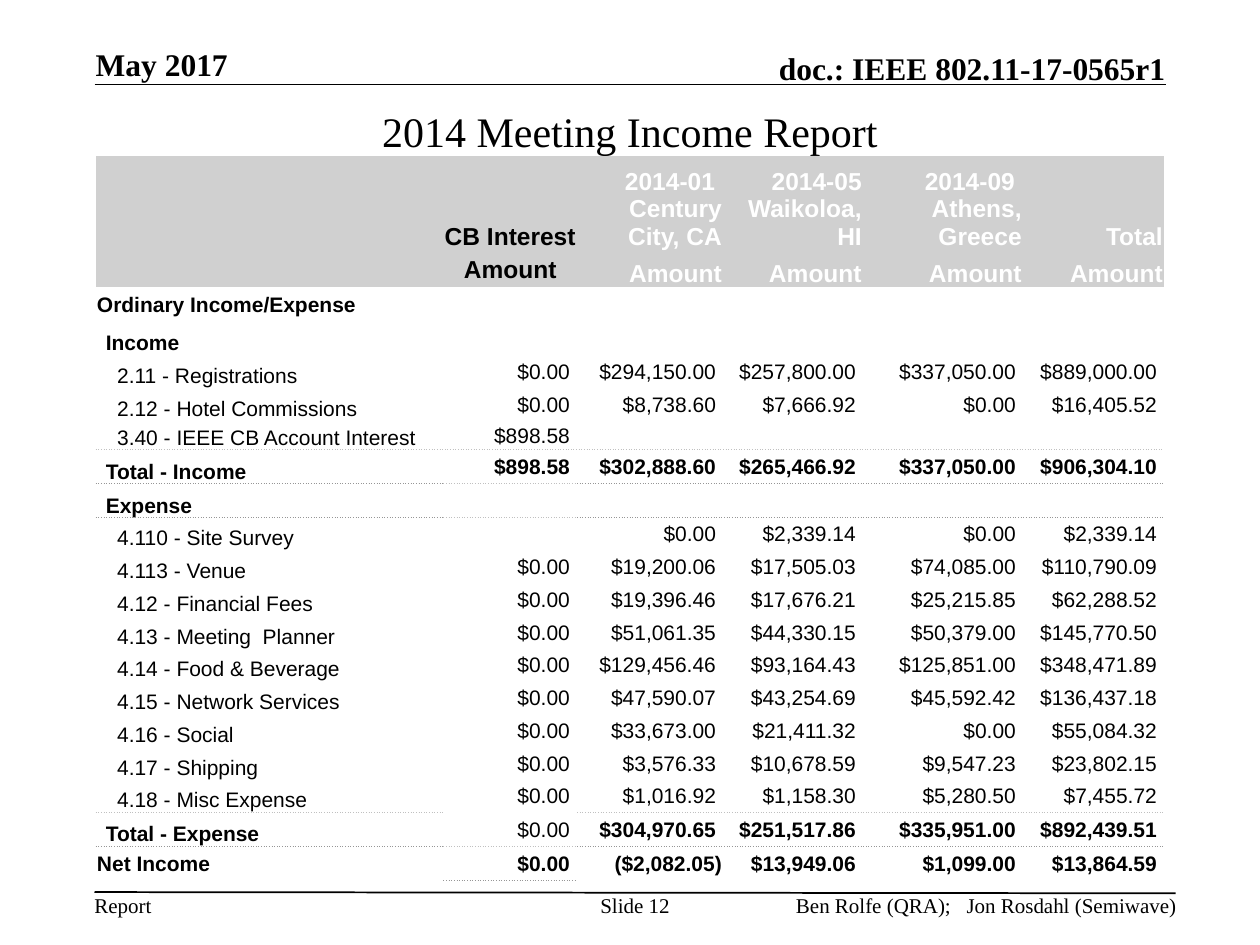
from lxml import etree
from pptx import Presentation
from pptx import util as u
from pptx.dml.color import RGBColor
from pptx.enum import shapes, text
from pptx.oxml import ns

LEFT, CENTER, RIGHT = text.PP_ALIGN.LEFT, text.PP_ALIGN.CENTER, text.PP_ALIGN.RIGHT
TOP, MIDDLE, BOTTOM = (text.MSO_ANCHOR.TOP, text.MSO_ANCHOR.MIDDLE,
                       text.MSO_ANCHOR.BOTTOM)
BLACK, WHITE, GREY = "000000", "FFFFFF", "D0D0D0"
LIGHT, DARK = "C0C0C0", "969696"
SERIF, SANS = "Times New Roman", "Arial"
NO_STYLE = "{2D5ABB26-0587-4C30-8999-92F81FD0307C}"

COLUMNS = [2.76, 1.06, 1.16, 1.11, 1.27, 1.12]
ROWS = [0.41, 0.75, 0.29, 0.27, 0.27, 0.26, 0.26, 0.23, 0.27, 0.27] + [0.26] * 9 + [0.27] * 2
INDENTS = [0.01, 0.08, 0.17]
HEADINGS = ["CB Interest", "2014-01 \nCentury City, CA", "2014-05 Waikoloa, HI",
            "2014-09 \nAthens, Greece", "Total"]
ENTRIES = [
    (0, "Ordinary Income/Expense", []),
    (1, "Income", []),
    (2, "2.11 - Registrations",
     ["$0.00", "$294,150.00", "$257,800.00", "$337,050.00", "$889,000.00"]),
    (2, "2.12 - Hotel Commissions",
     ["$0.00", "$8,738.60", "$7,666.92", "$0.00", "$16,405.52"]),
    (2, "3.40 - IEEE CB Account Interest", ["$898.58"]),
    (1, "Total - Income",
     ["$898.58", "$302,888.60", "$265,466.92", "$337,050.00", "$906,304.10"]),
    (1, "Expense", []),
    (2, "4.110 - Site Survey", ["", "$0.00", "$2,339.14", "$0.00", "$2,339.14"]),
    (2, "4.113 - Venue",
     ["$0.00", "$19,200.06", "$17,505.03", "$74,085.00", "$110,790.09"]),
    (2, "4.12 - Financial Fees",
     ["$0.00", "$19,396.46", "$17,676.21", "$25,215.85", "$62,288.52"]),
    (2, "4.13 - Meeting  Planner",
     ["$0.00", "$51,061.35", "$44,330.15", "$50,379.00", "$145,770.50"]),
    (2, "4.14 - Food & Beverage",
     ["$0.00", "$129,456.46", "$93,164.43", "$125,851.00", "$348,471.89"]),
    (2, "4.15 - Network Services",
     ["$0.00", "$47,590.07", "$43,254.69", "$45,592.42", "$136,437.18"]),
    (2, "4.16 - Social",
     ["$0.00", "$33,673.00", "$21,411.32", "$0.00", "$55,084.32"]),
    (2, "4.17 - Shipping",
     ["$0.00", "$3,576.33", "$10,678.59", "$9,547.23", "$23,802.15"]),
    (2, "4.18 - Misc Expense",
     ["$0.00", "$1,016.92", "$1,158.30", "$5,280.50", "$7,455.72"]),
    (1, "Total - Expense",
     ["$0.00", "$304,970.65", "$251,517.86", "$335,951.00", "$892,439.51"]),
    (0, "Net Income",
     ["$0.00", "($2,082.05)", "$13,949.06", "$1,099.00", "$13,864.59"]),
]
RULES_BELOW = {
    7: [LIGHT] * 6,
    8: [DARK, LIGHT] + [DARK] * 4,
    18: [LIGHT, None] + [LIGHT] * 4,
    19: [DARK, LIGHT] + [DARK] * 4,
    20: [None, DARK] + [None] * 4,
}


def color(value):
    return RGBColor.from_string(value)


class ReportSlide:
    """Draws report elements on one slide in a shared style."""

    def __init__(self, page):
        self.page = page

    def add_words(self, para, words, size, font, ink=BLACK, bold=False, align=LEFT):
        para.alignment = align
        for index, line in enumerate(words.split("\n")):
            if index:
                para.add_line_break()
            span = para.add_run()
            span.text = line
            span.font.size = u.Pt(size)
            span.font.name = font
            span.font.bold = bold
            span.font.color.rgb = color(ink)

    def label(self, place, words, size, bold=False, align=LEFT, anchor=TOP, wrap=True):
        frame = self.page.shapes.add_textbox(*map(u.Inches, place)).text_frame
        frame.margin_left = frame.margin_right = frame.margin_top = frame.margin_bottom = 0
        frame.word_wrap = wrap
        frame.vertical_anchor = anchor
        self.add_words(frame.paragraphs[0], words, size, SERIF, bold=bold, align=align)

    def rule(self, *ends):
        line = self.page.shapes.add_connector(shapes.MSO_CONNECTOR.STRAIGHT,
                                              *map(u.Inches, ends))
        line.line.color.rgb = color(BLACK)
        line.line.width = u.Pt(1)
        etree.SubElement(line._element.spPr, ns.qn("a:effectLst"))

    def grid(self, left, top):
        frame = self.page.shapes.add_table(len(ROWS), len(COLUMNS), u.Inches(left),
                                           u.Inches(top), u.Inches(sum(COLUMNS)),
                                           u.Inches(sum(ROWS)))
        table = frame.table
        table.first_row = table.horz_banding = False
        table._tbl.tblPr.find(ns.qn("a:tableStyleId")).text = NO_STYLE
        for column, width in zip(table.columns, COLUMNS):
            column.width = u.Inches(width)
        for row, height in zip(table.rows, ROWS):
            row.height = u.Inches(height)
        return table

    def border(self, cell, side, ink):
        line = etree.SubElement(cell._tc.get_or_add_tcPr(), ns.qn("a:" + side),
                                w=str(u.Pt(0.5)))
        fill = etree.SubElement(line, ns.qn("a:solidFill"))
        etree.SubElement(fill, ns.qn("a:srgbClr"), val=ink)
        etree.SubElement(line, ns.qn("a:prstDash"), val="dot")

    def cell(self, table, row, col, words="", size=12, font=SANS, indent=0.01,
             anchor=MIDDLE, fill=None, **style):
        cell = table.cell(row, col)
        cell.margin_left = u.Inches(indent)
        cell.margin_right = cell.margin_top = u.Inches(0.01)
        cell.margin_bottom = 0
        cell.vertical_anchor = anchor
        for side, line_row in (("lnT", row - 1), ("lnB", row)):
            ink = RULES_BELOW.get(line_row, [None] * 6)[col]
            if ink:
                self.border(cell, side, ink)
        if fill:
            cell.fill.solid()
            cell.fill.fore_color.rgb = color(fill)
        else:
            cell.fill.background()
        para = cell.text_frame.paragraphs[0]
        if words:
            self.add_words(para, words, size, font, **style)
        else:
            etree.SubElement(para._p, ns.qn("a:endParaRPr"), sz=str(size * 100))

    def income_table(self):
        table = self.grid(0.76, 0.83)
        self.cell(table, 0, 0, "2014 Meeting Income Report", size=24, font=SERIF,
                  anchor=BOTTOM, align=CENTER)
        for col in range(1, len(COLUMNS)):
            self.cell(table, 0, col)
        table.cell(0, 0).merge(table.cell(0, 5))
        for row, words in ((1, HEADINGS), (2, ["Amount"] * 5)):
            for col, heading in enumerate([""] + words):
                first = col == 1
                self.cell(table, row, col, heading, size=14, fill=GREY, bold=True,
                          anchor=MIDDLE if first and row == 2 else BOTTOM,
                          ink=BLACK if first else WHITE, align=CENTER if first else RIGHT)
        for row, (level, name, amounts) in enumerate(ENTRIES, 3):
            self.cell(table, row, 0, name, indent=INDENTS[level], bold=level < 2,
                      anchor=BOTTOM if level else MIDDLE)
            for col in range(1, len(COLUMNS)):
                amount = amounts[col - 1] if col <= len(amounts) else ""
                if amount.startswith("$"):
                    amount += " "
                bold = level < 2 and (name, col) != ("Total - Expense", 1)
                self.cell(table, row, col, amount, bold=bold, align=RIGHT)


def main():
    deck = Presentation()
    deck.slide_width, deck.slide_height = u.Inches(10), u.Inches(7.5)
    report = ReportSlide(deck.slides.add_slide(deck.slide_layouts[6]))
    report.rule(0.75, 0.67, 9.25, 0.67)
    report.label((0.75, 7.08, 0.46, 0.2), "Report", 12, wrap=False)
    report.rule(0.75, 7.08, 9.33, 7.09)
    report.label((3.92, 0.39, 5.33, 0.3), "doc.: IEEE 802.11-17-0565r1", 18, bold=True,
                 align=RIGHT, anchor=BOTTOM)
    report.label((0.76, 0.36, 2.05, 0.3), "May 2017", 18, bold=True, anchor=BOTTOM)
    report.label((4.75, 7.08, 0.58, 0.4), "Slide 12", 12, align=CENTER)
    report.label((6, 7.08, 3.34, 0.2), "Ben Rolfe (QRA);   Jon Rosdahl (Semiwave)", 12,
                 align=RIGHT)
    report.income_table()
    deck.save("out.pptx")


if __name__ == "__main__":
    main()
